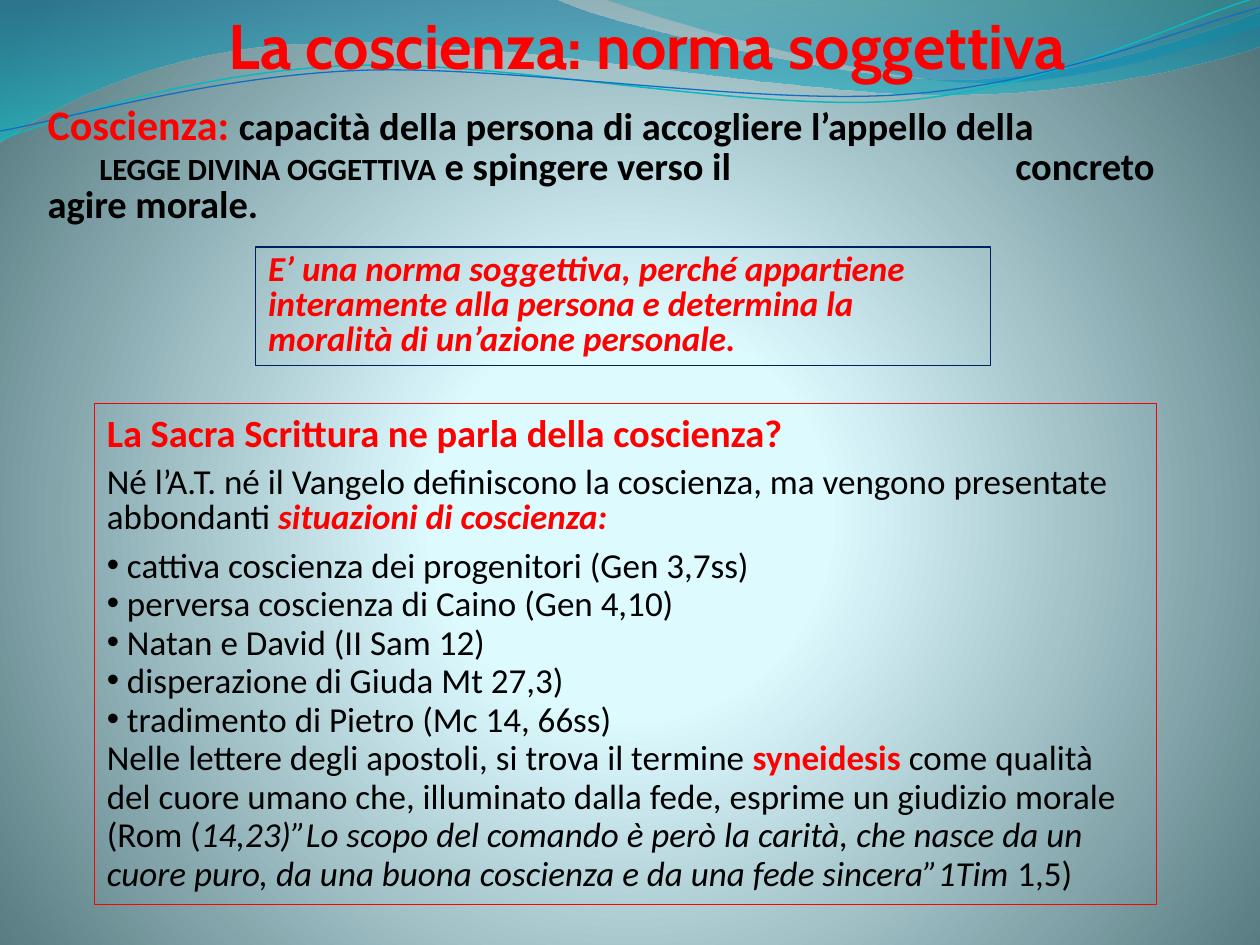
from math import cos, radians, sin

from lxml.etree import SubElement
from pptx import Presentation
from pptx.dml.color import RGBColor
from pptx.enum.shapes import MSO_SHAPE
from pptx.enum.text import MSO_ANCHOR, MSO_AUTO_SIZE, PP_ALIGN
from pptx.oxml import parse_xml
from pptx.oxml.ns import nsdecls, qn
from pptx.util import Inches, Pt

COLORS = {
    "red": "FF0000", "black": "000000", "navy": "002060",
    "glow": "DEFBFF", "pale": "DDFAFF", "edge": "52767C",
    "blue": "0074A1", "cyan": "00C6CF", "teal": "00A1A9", "sky": "008BBF",
    "aqua_line": "0AB8BF", "blue_line": "0F6FC6",
}

# Each wave is a start point and its segments: one point is a line, three a curve.
LEFT_WAVE = [(0, 0), [(4.4, -0.01)],
             [(4.76, 0.17), (6.64, 0.63), (7.58, 0.63)],
             [(8.53, 0.63), (9.58, 0.26), (10, 0.09)],
             [(10.01, 0.36)],
             [(9.83, 0.44), (8.7, 0.76), (7.46, 0.75)],
             [(6.22, 0.75), (3.82, 0.28), (2.57, 0.34)],
             [(1.29, 0.36), (0.46, 0.83), (-0.01, 1.13)],
             [(0, 0)]]
RIGHT_WAVE = [(4.79, -0.01),
              [(5.09, 0.11), (6.82, 0.62), (7.69, 0.65)],
              [(8.56, 0.69), (9.61, 0.32), (10, 0.21)],
              [(10, 0)], [(4.79, -0.01)]]
AQUA_CURVE = [(0, 1.11),
              [(0.48, 0.93), (1.58, 0.57), (2.77, 0.52)],
              [(3.95, 0.47), (5.93, 0.89), (7.13, 0.8)],
              [(8.33, 0.71), (9.38, 0.15), (9.98, -0.02)]]
BLUE_CURVE = [(0, 1.04),
              [(0.47, 0.96), (1.64, 0.61), (2.83, 0.56)],
              [(4.03, 0.51), (5.97, 0.84), (7.17, 0.75)],
              [(8.36, 0.67), (9.41, 0.21), (10, 0.06)]]
CURVE_TILT = -2.7


def color(name):
    return RGBColor.from_string(COLORS[name])


def set_gradient(parent, stops, direction):
    """Swap in a gradient of (percent, colour, opacity percent) stops."""
    marks = "".join(
        f'<a:gs pos="{at * 1000}"><a:srgbClr val="{COLORS[name]}">'
        f'<a:alpha val="{opacity * 1000}"/></a:srgbClr></a:gs>'
        for at, name, opacity in stops)
    fill = parse_xml(f'<a:gradFill {nsdecls("a")} rotWithShape="1">'
                     f'<a:gsLst>{marks}</a:gsLst>{direction}</a:gradFill>')
    parent.replace(parent.find(qn("a:gradFill")), fill)


def paint_background(page):
    page.background.fill.gradient()
    properties = page._element.cSld.find(qn("p:bg")).find(qn("p:bgPr"))
    glow = ('<a:path path="circle">'
            '<a:fillToRect l="10000" t="110000" r="10000" b="100000"/></a:path>')
    set_gradient(properties, [(0, "glow", 100), (25, "pale", 100), (100, "edge", 100)], glow)


def turn(point, center, degrees):
    angle = radians(degrees)
    x, y = point[0] - center[0], point[1] - center[1]
    return (center[0] + x * cos(angle) - y * sin(angle),
            center[1] + x * sin(angle) + y * cos(angle))


def add_outline(page, wave, close, tilt=0, center=(0, 0)):
    """Freeform whose three-point segments become cubic curves."""
    points = [wave[0]] + [point for segment in wave[1:] for point in segment]
    places = [tuple(Inches(length) for length in turn(point, center, -tilt))
              for point in points]
    builder = page.shapes.build_freeform(*places[0])
    builder.add_line_segments(places[1:], close=close)
    shape = builder.convert_to_shape()
    shape.shadow.inherit = False
    shape.rotation = tilt
    lines = iter(list(shape._element.iter(qn("a:lnTo"))))
    for segment in wave[1:]:
        parts = [next(lines) for _ in segment]
        if len(parts) == 3:
            curve = parse_xml(f'<a:cubicBezTo {nsdecls("a")}/>')
            parts[0].addprevious(curve)
            for part in parts:
                curve.append(part[0])
                part.getparent().remove(part)
    return shape


def add_waves(page):
    for wave, stops in (
            (LEFT_WAVE, [(0, "blue", 45), (100, "cyan", 55)]),
            (RIGHT_WAVE, [(0, "teal", 30), (80, "sky", 45)])):
        shape = add_outline(page, wave, close=True)
        shape.line.fill.background()
        shape.fill.gradient()
        set_gradient(shape._element.spPr, stops, '<a:lin ang="5400000" scaled="1"/>')
    for wave, center, name, width in (
            (AQUA_CURVE, (4.99, 0.58), "aqua_line", 0.85),
            (BLUE_CURVE, (5, 0.59), "blue_line", 0.75)):
        shape = add_outline(page, wave, False, CURVE_TILT, center)
        shape.fill.background()
        shape.line.color.rgb = color(name)
        shape.line.width = Pt(width)


def add_text_area(page, box, border=None):
    """Text frame in a box of inches, with a thin border if a colour is given."""
    place = [Inches(length) for length in box]
    if border:
        shape = page.shapes.add_shape(MSO_SHAPE.RECTANGLE, *place)
        shape.shadow.inherit = False
        shape.fill.background()
        shape.line.color.rgb = color(border)
        shape.line.width = Pt(0.75)
    else:
        shape = page.shapes.add_textbox(*place)
    frame = shape.text_frame
    frame.word_wrap = True
    frame.auto_size = MSO_AUTO_SIZE.SHAPE_TO_FIT_TEXT
    frame.vertical_anchor = MSO_ANCHOR.TOP
    return frame


def style_paragraph(para, size, name="black", bold=None, italic=None,
                    spacing=None, after=0, face="Calibri"):
    para.alignment = PP_ALIGN.LEFT
    para.space_after = Pt(after)
    if spacing:
        para.line_spacing = Pt(spacing)
    font = para.font
    font.name, font.size, font.bold, font.italic = face, Pt(size), bold, italic
    font.color.rgb = color(name)


def add_span(para, text, name=None, **font_values):
    span = para.add_run()
    span.text = text
    if name:
        span.font.color.rgb = color(name)
    for key, value in font_values.items():
        setattr(span.font, key, value)
    return span


def add_title(page, box):
    para = add_text_area(page, box).paragraphs[0]
    style_paragraph(para, 36, "red", bold=True, face="Cabin")
    para.alignment = PP_ALIGN.CENTER
    add_span(para, "La coscienza: norma soggettiva")


def add_definition(page, box):
    para = add_text_area(page, box).paragraphs[0]
    style_paragraph(para, 22, bold=True, spacing=22)
    tabs = parse_xml(f'<a:tabLst {nsdecls("a")}/>')
    for stop in (0.41, 7.68):
        SubElement(tabs, qn("a:tab"), pos=str(Inches(stop)), algn="l")
    para._p.get_or_add_pPr().find(qn("a:defRPr")).addprevious(tabs)
    add_span(para, "Coscienza: ", "red", size=Pt(24))
    add_span(para, "capacità della persona di accogliere l’appello della")
    para.add_line_break()
    law = add_span(para, "\tlegge divina oggettiva")
    law._r.get_or_add_rPr().set("cap", "small")
    add_span(para, " e spingere verso il\tconcreto agire morale.")


def add_norm(page, box):
    para = add_text_area(page, box, "navy").paragraphs[0]
    style_paragraph(para, 20, "red", bold=True, italic=True, spacing=20)
    add_span(para, "E’ una norma soggettiva, perché appartiene interamente alla "
                   "persona e determina la moralità di un’azione personale.")


def add_bullet(para):
    mark = para._p.get_or_add_pPr().find(qn("a:defRPr"))
    for tag in ('buFont {} typeface="Arial"', 'buChar {} char="•"'):
        mark.addprevious(parse_xml(f'<a:{tag.format(nsdecls("a"))}/>'))


def add_scripture(page, box):
    frame = add_text_area(page, box, "red")
    question = frame.paragraphs[0]
    style_paragraph(question, 22, "red", bold=True, after=6)
    add_span(question, "La Sacra Scrittura ne parla della coscienza?")

    answer = frame.add_paragraph()
    style_paragraph(answer, 20, spacing=20, after=6)
    add_span(answer, "Né l’A.T. né il Vangelo definiscono la coscienza, "
                     "ma vengono presentate abbondanti ")
    add_span(answer, "situazioni di coscienza:", "red", bold=True, italic=True)

    for example in (" cattiva coscienza dei progenitori (Gen 3,7ss)",
                    " perversa coscienza di Caino (Gen 4,10)", " Natan e David (II Sam 12)",
                    " disperazione di Giuda Mt 27,3)", " tradimento di Pietro (Mc 14, 66ss)"):
        para = frame.add_paragraph()
        style_paragraph(para, 20, spacing=22)
        add_bullet(para)
        add_span(para, example)

    letters = frame.add_paragraph()
    style_paragraph(letters, 20, spacing=22)
    add_span(letters, "Nelle lettere degli apostoli, si trova il termine ")
    add_span(letters, "syneidesis ", "red", bold=True)
    add_span(letters, "come qualità del cuore umano che, illuminato dalla fede, "
                      "esprime un giudizio morale (Rom (")
    add_span(letters, "14,23)”Lo scopo del comando è però la carità, che nasce da un cuore "
                      "puro, da una buona coscienza e da una fede sincera”1Tim", italic=True)
    add_span(letters, " 1,5)")


def main():
    deck = Presentation()
    deck.slide_width, deck.slide_height = Inches(10), Inches(7.5)
    page = deck.slides.add_slide(deck.slide_layouts[6])
    paint_background(page)
    add_waves(page)
    add_title(page, (0, 0, 10.28, 0.71))
    add_definition(page, (0.28, 0.83, 9.45, 1.03))
    add_norm(page, (2.03, 1.96, 5.83, 0.94))
    add_scripture(page, (0.75, 3.2, 8.43, 3.98))
    deck.save("out.pptx")


if __name__ == "__main__":
    main()
